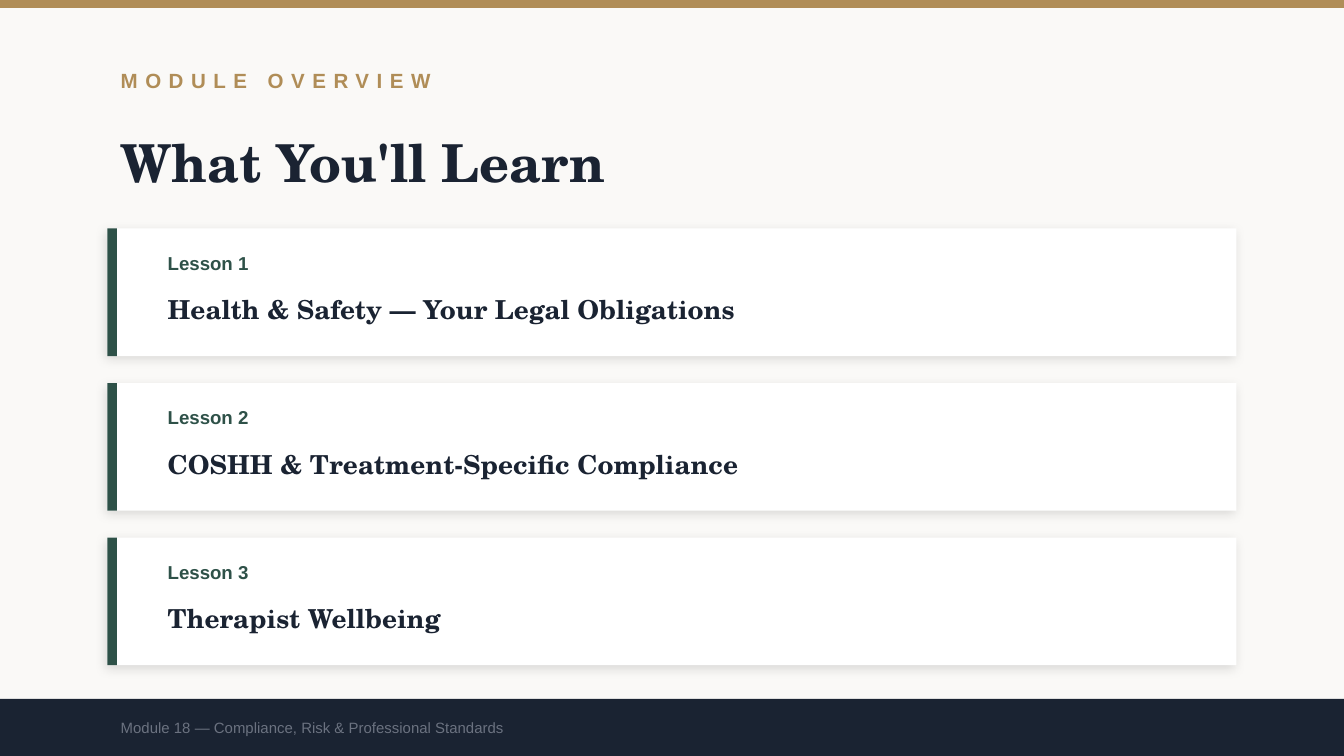
from dataclasses import dataclass

from lxml.etree import SubElement
from pptx import Presentation
from pptx.dml.color import RGBColor
from pptx.enum.shapes import MSO_SHAPE as SHAPE
from pptx.enum.text import MSO_ANCHOR as ANCHOR
from pptx.oxml.ns import qn
from pptx.util import Inches, Pt


@dataclass(frozen=True)
class Theme:
    # Colours
    paper: str = "FAF9F7"
    gold: str = "B08D57"
    navy: str = "1A2332"
    green: str = "2E5148"
    white: str = "FFFFFF"
    grey: str = "6B7280"
    shadow: str = "000000"
    # Fonts
    sans: str = "Arial"
    serif: str = "TeX Gyre Schola"
    # Type sizes
    title: int = 28
    lesson: int = 14
    kicker: int = 11
    label: int = 10
    footer: int = 8


class Deck:
    def __init__(self, slide, theme):
        self.slide = slide
        self.theme = theme

    def background(self, colour):
        fill = self.slide.background.fill
        fill.solid()
        fill.fore_color.rgb = RGBColor.from_string(colour)

    def rect(self, x, y, w, h, colour):
        s = self.slide.shapes.add_shape(
            SHAPE.RECTANGLE, Inches(x), Inches(y), Inches(w), Inches(h))
        s.shadow.inherit = False
        s.fill.solid()
        s.fill.fore_color.rgb = RGBColor.from_string(colour)
        s.line.fill.background()
        return s

    def soft_shadow(self, s):
        effects = s._element.spPr.find(qn("a:effectLst"))
        shadow = SubElement(effects, qn("a:outerShdw"), blurRad=str(Pt(6)),
                            dist=str(Pt(2)), dir=str(135 * 60000),
                            algn="bl", rotWithShape="0")
        colour = SubElement(shadow, qn("a:srgbClr"), val=self.theme.shadow)
        SubElement(colour, qn("a:alpha"), val="12000")

    def text(self, x, y, w, h, text, size, colour, font, bold=True, spacing=0):
        s = self.slide.shapes.add_textbox(
            Inches(x), Inches(y), Inches(w), Inches(h))
        tf = s.text_frame
        tf.word_wrap = True
        tf.vertical_anchor = ANCHOR.MIDDLE
        tf.text = text
        r = tf.paragraphs[0].runs[0]
        r.font.size = Pt(size)
        r.font.name = font
        r.font.bold = bold
        r.font.color.rgb = RGBColor.from_string(colour)
        if spacing:
            r.font._element.set("spc", str(spacing * 100))

    def lesson_card(self, y, label, title):
        t = self.theme
        self.soft_shadow(self.rect(0.8, y, 8.4, 0.95, t.white))
        self.rect(0.8, y, 0.07, 0.95, t.green)
        self.text(1.15, y + 0.08, 7, 0.35, label, t.label, t.green, t.sans)
        self.text(1.15, y + 0.4, 7.8, 0.4, title, t.lesson, t.navy, t.serif)


def main():
    # Widescreen slide, 16:9
    prs = Presentation()
    prs.slide_width = Inches(10)
    prs.slide_height = prs.slide_width * 9 // 16
    t = Theme()
    deck = Deck(prs.slides.add_slide(prs.slide_layouts[6]), t)

    # Background and top band
    deck.background(t.paper)
    deck.rect(0, 0, 10, 0.06, t.gold)

    # Heading
    deck.text(0.8, 0.4, 8, 0.4, "MODULE OVERVIEW", t.kicker, t.gold, t.sans,
              spacing=4)
    deck.text(0.8, 0.9, 8, 0.6, "What You'll Learn", t.title, t.navy, t.serif)

    # Lesson cards
    lessons = [
        "Health & Safety — Your Legal Obligations",
        "COSHH & Treatment-Specific Compliance",
        "Therapist Wellbeing",
    ]
    for i, title in enumerate(lessons):
        deck.lesson_card(1.7 + i * 1.15, f"Lesson {i + 1}", title)

    # Footer
    deck.rect(0, 5.2, 10, 0.43, t.navy)
    deck.text(0.8, 5.2, 8, 0.43,
              "Module 18 — Compliance, Risk & Professional Standards",
              t.footer, t.grey, t.sans, bold=False)

    prs.save("out.pptx")


if __name__ == "__main__":
    main()
